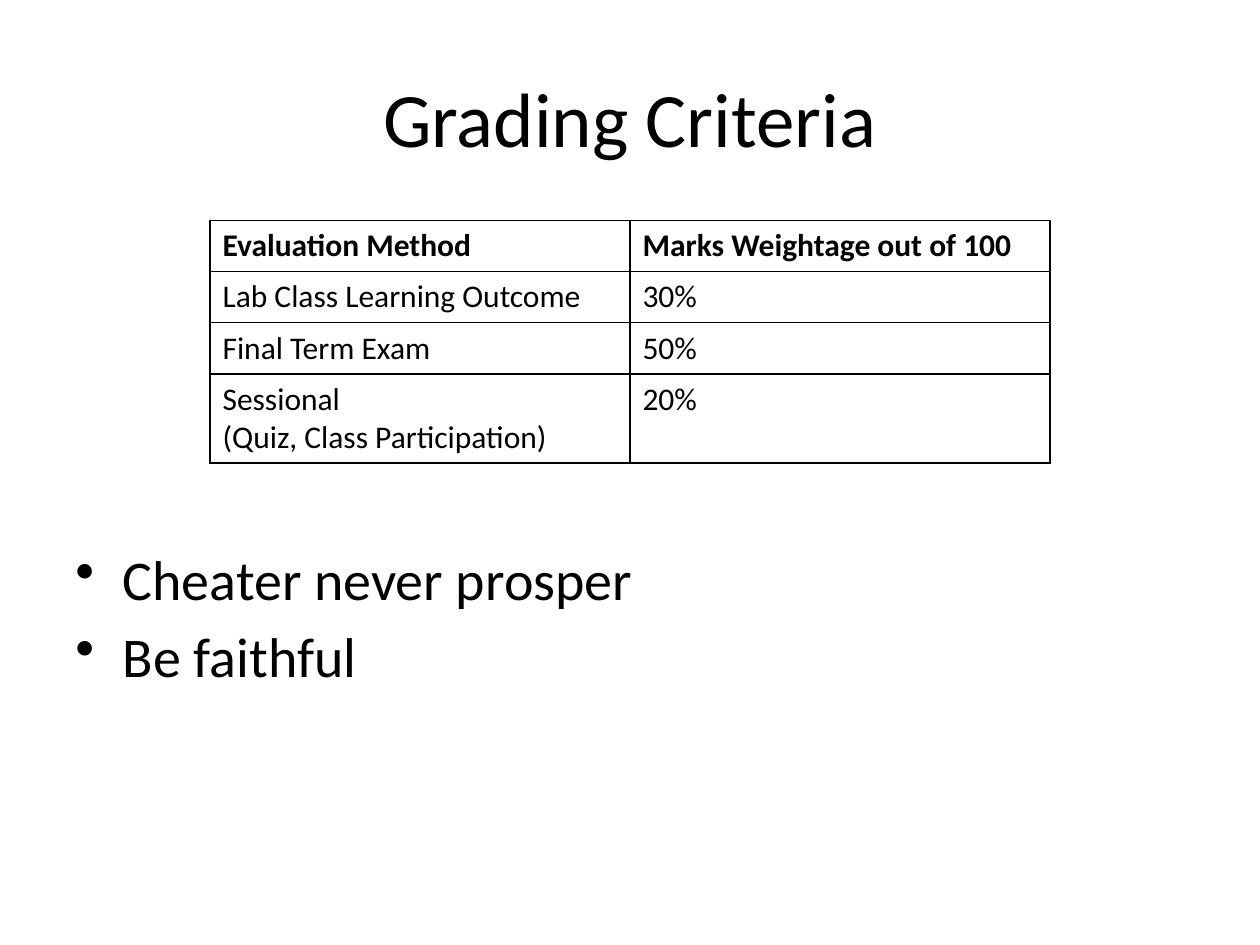
import pptx
import pptx.util
import pptx.dml.color
import pptx.enum.text
import pptx.oxml
import pptx.oxml.ns
from dataclasses import dataclass

Pt = pptx.util.Pt
ALIGN = pptx.enum.text.PP_ALIGN
ANCHOR = pptx.enum.text.MSO_ANCHOR

# Content
TITLE = "Grading Criteria"
GRADES = [
    (["Evaluation Method"], ["Marks Weightage out of 100"]),
    (["Lab Class Learning Outcome"], ["30%"]),
    (["Final Term Exam"], ["50%"]),
    (["Sessional", "(Quiz, Class Participation)"], ["20%"]),
]
ADVICE = ["Cheater never prosper", "Be faithful"]


@dataclass
class Theme:
    font: str = "Calibri"
    ink: str = "000000"
    title: int = 44
    body: int = 32
    table: int = 18


theme = Theme()


def write(tf, lines, size, bold=False, align=ALIGN.LEFT, bullet=None,
          indent=0, gap=0):
    """Fill a text frame, one paragraph for each line."""
    tf.word_wrap = True
    for i, line in enumerate(lines):
        p = tf.paragraphs[0] if i == 0 else tf.add_paragraph()
        if bullet:
            pPr = p._p.get_or_add_pPr()
            pPr.set("marL", str(Pt(indent)))
            pPr.set("indent", str(-Pt(indent)))
            bu = pptx.oxml.parse_xml(
                f'<a:buChar {pptx.oxml.ns.nsdecls("a")} char="{bullet}"/>')
            pPr.append(bu)
        p.alignment = align
        if i and gap:
            p.space_before = Pt(gap)
        r = p.add_run()
        r.text = line
        r.font.name = theme.font
        r.font.size = Pt(size)
        r.font.bold = bold
        r.font.color.rgb = pptx.dml.color.RGBColor.from_string(theme.ink)


def add_borders(cell, width):
    tcPr = cell._tc.get_or_add_tcPr()
    for i, side in enumerate(("lnL", "lnR", "lnT", "lnB")):
        ln = pptx.oxml.parse_xml(
            f'<a:{side} {pptx.oxml.ns.nsdecls("a")} w="{Pt(width)}">'
            f'<a:solidFill><a:srgbClr val="{theme.ink}"/></a:solidFill>'
            f'</a:{side}>')
        tcPr.insert(i, ln)


def main():
    prs = pptx.Presentation()
    prs.slide_width, prs.slide_height = Pt(720), Pt(540)
    s = prs.slides.add_slide(prs.slide_layouts[6])
    margin = 36
    width = 720 - 2 * margin

    # Title
    sp = s.shapes.add_textbox(Pt(margin), Pt(21.6), Pt(width), Pt(90))
    sp.text_frame.vertical_anchor = ANCHOR.MIDDLE
    write(sp.text_frame, [TITLE], theme.title, align=ALIGN.CENTER)

    # Advice below the table
    sp = s.shapes.add_textbox(Pt(margin), Pt(307.5), Pt(width), Pt(175))
    write(sp.text_frame, ADVICE, theme.body, bullet="•", indent=27, gap=5.5)

    # Grading table, centred on the slide
    col_width, row_height, extra_line = 240, 29.2, 21.8
    heights = [row_height + extra_line * (max(map(len, row)) - 1)
               for row in GRADES]
    table_width = col_width * len(GRADES[0])
    table = s.shapes.add_table(
        len(GRADES), len(GRADES[0]), Pt((720 - table_width) / 2), Pt(126),
        Pt(table_width), Pt(sum(heights))).table
    table.horz_banding = False
    for i, row in enumerate(GRADES):
        table.rows[i].height = Pt(heights[i])
        for j, lines in enumerate(row):
            cell = table.cell(i, j)
            cell.fill.background()
            add_borders(cell, 1)
            write(cell.text_frame, lines, theme.table, bold=i == 0)

    prs.save("out.pptx")


if __name__ == "__main__":
    main()
